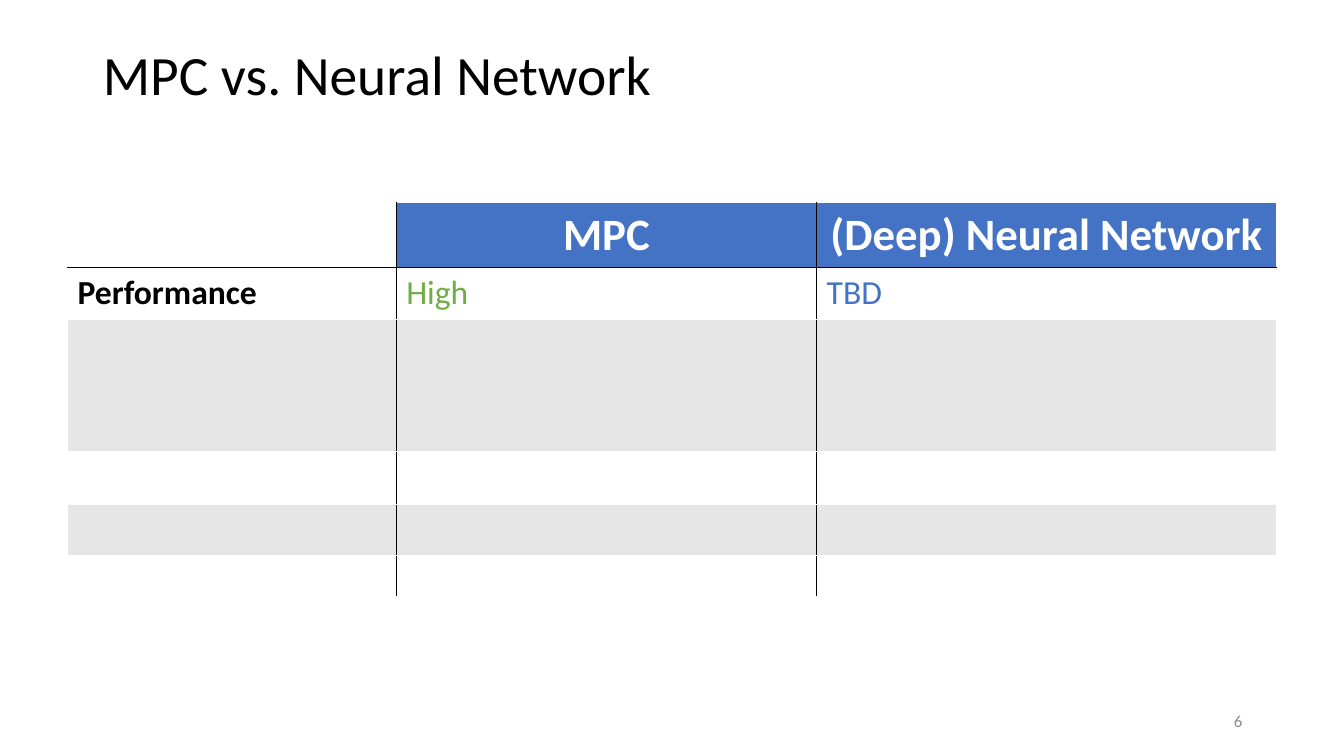
from lxml import etree
from pptx import Presentation
from pptx.dml.color import RGBColor
from pptx.enum.text import MSO_ANCHOR, MSO_AUTO_SIZE, PP_ALIGN
from pptx.oxml.ns import qn
from pptx.util import Inches, Pt

COLORS = {
    "white": "FFFFFF",
    "black": "000000",
    "blue": "4472C4",
    "green": "70AD47",
    "band": "E7E6E6",
    "gray": "8C8C8C",
}


def write(frame, text, size, color, bold=False, align=PP_ALIGN.LEFT):
    frame.text = text
    paragraph = frame.paragraphs[0]
    paragraph.alignment = align
    font = paragraph.runs[0].font
    font.name, font.size, font.bold = "Calibri", Pt(size), bold
    font.color.rgb = RGBColor.from_string(COLORS[color])


def add_border(cell, side, color):
    """Draw a 1 pt line on one side (L, R, T or B) of a table cell."""
    line = etree.SubElement(cell._tc.get_or_add_tcPr(), qn(f"a:ln{side}"), w=str(Pt(1)))
    fill = etree.SubElement(line, qn("a:solidFill"))
    etree.SubElement(fill, qn("a:srgbClr"), val=COLORS[color])


prs = Presentation()
prs.slide_width, prs.slide_height = Inches(13.33), Inches(7.5)
slide = prs.slides.add_slide(prs.slide_layouts[5])

# Title
title = slide.shapes.title
title.left, title.top = Inches(0.92), Inches(0.4)
title.width, title.height = Inches(11.5), Inches(0.74)
title.text_frame.auto_size = MSO_AUTO_SIZE.NONE
title.text_frame.vertical_anchor = MSO_ANCHOR.MIDDLE
write(title.text_frame, "MPC vs. Neural Network", 39.6, "black")
title.text_frame.paragraphs[0].line_spacing = 0.9

# Comparison table
column_widths = [3.26, 4.17, 4.56]
row_heights = [0.64, 0.52, 1.31, 0.52, 0.51, 0.41]
last_column = len(column_widths) - 1
comparison = slide.shapes.add_table(
    len(row_heights), len(column_widths), Inches(0.67), Inches(2.01),
    Inches(sum(column_widths)), Inches(sum(row_heights))).table
comparison.first_row = comparison.horz_banding = False
for column, width in zip(comparison.columns, column_widths):
    column.width = Inches(width)
for row, height in zip(comparison.rows, row_heights):
    row.height = Inches(height)

for r in range(len(row_heights)):
    for c in range(len(column_widths)):
        cell = comparison.cell(r, c)
        add_border(cell, "L", "black" if c > 0 else "white")
        add_border(cell, "R", "black" if c < last_column else "white")
        add_border(cell, "T", "black" if r == 1 else "white")
        add_border(cell, "B", "black" if r == 0 else "white")
        if r == 0 and c > 0:
            shade = "blue"
        else:
            shade = "band" if r in (2, 4) else "white"
        cell.fill.solid()
        cell.fill.fore_color.rgb = RGBColor.from_string(COLORS[shade])

for c, method in enumerate(["MPC", "(Deep) Neural Network"], start=1):
    write(comparison.cell(0, c).text_frame, method, 32, "white", True, PP_ALIGN.CENTER)
performance = [("Performance", "black"), ("High", "green"), ("TBD", "blue")]
for c, (text, color) in enumerate(performance):
    write(comparison.cell(1, c).text_frame, text, 24, color, bold=c == 0)

# Slide number
page_number = slide.shapes.add_textbox(
    Inches(9.42), Inches(6.95), Inches(3), Inches(0.4)).text_frame
page_number.word_wrap = True
page_number.vertical_anchor = MSO_ANCHOR.MIDDLE
write(page_number, "6", 12, "gray", align=PP_ALIGN.RIGHT)

prs.save("out.pptx")
